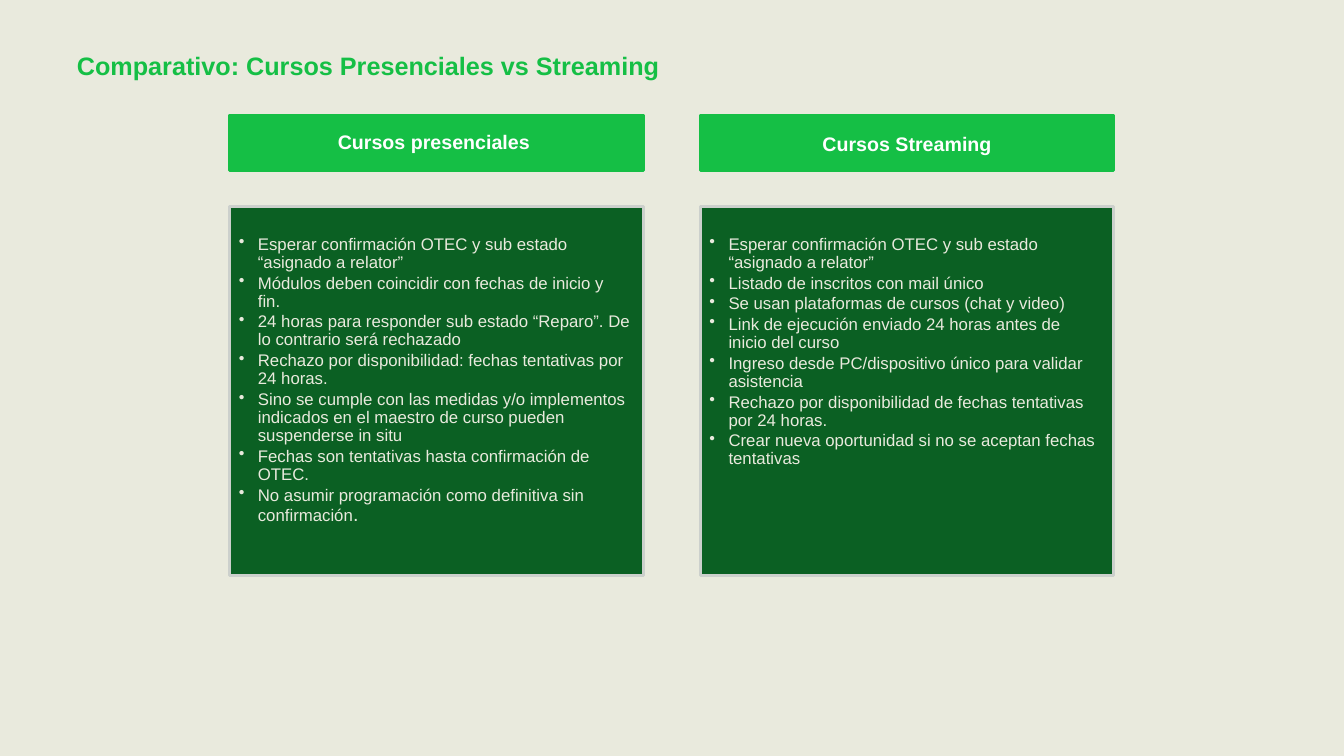
from pptx import Presentation
from pptx.dml.color import RGBColor
from pptx.enum.shapes import MSO_SHAPE as Shape
from pptx.enum.text import MSO_ANCHOR as Anchor, PP_ALIGN as Align
from pptx.oxml.ns import qn
from pptx.util import Cm, Pt
from lxml.etree import SubElement

COLORS = {
    "background": "E9EADD",
    "green": "15BF45",
    "dark_green": "0B6023",
    "border": "CCD0CC",
    "white": "FFFFFF",
}
COLUMN_WIDTH = 10.42
COLUMN_PITCH = 11.86
FIRST_LEFT = 5.79

# Heading, vertical nudge and horizontal nudge of its text, bullets
COLUMNS = [
    ("Cursos presenciales", 0, 0.13, [
        "Esperar confirmación OTEC y sub estado “asignado a relator”",
        "Módulos deben coincidir con fechas de inicio y fin.",
        "24 horas para responder sub estado “Reparo”. De lo contrario será rechazado",
        "Rechazo por disponibilidad: fechas tentativas por 24 horas.",
        "Sino se cumple con las medidas y/o implementos indicados en el maestro "
        "de curso pueden suspenderse in situ",
        "Fechas son tentativas hasta confirmación de OTEC.",
        "No asumir programación como definitiva sin confirmación",
    ]),
    ("Cursos Streaming", 0.1, 0, [
        "Esperar confirmación OTEC y sub estado “asignado a relator”",
        "Listado de inscritos con mail único",
        "Se usan plataformas de cursos (chat y video)",
        "Link de ejecución enviado 24 horas antes de inicio del curso",
        "Ingreso desde PC/dispositivo único para validar asistencia",
        "Rechazo por disponibilidad de fechas tentativas por 24 horas.",
        "Crear nueva oportunidad si no se aceptan fechas tentativas",
    ]),
]


def set_font(font, size, color, bold=False):
    font.name = "Arial"
    font.size = Pt(size)
    font.bold = bold
    font.color.rgb = RGBColor.from_string(COLORS[color])


def add_box(left, top, height, fill, line, margins):
    shape = slide.shapes.add_shape(
        Shape.RECTANGLE, Cm(left), Cm(top), Cm(COLUMN_WIDTH), Cm(height))
    shape.shadow.inherit = False
    shape.fill.solid()
    shape.fill.fore_color.rgb = RGBColor.from_string(COLORS[fill])
    shape.line.color.rgb = RGBColor.from_string(COLORS[line])
    shape.line.width = Pt(2)
    frame = shape.text_frame
    frame.word_wrap = True
    (frame.margin_left, frame.margin_top,
     frame.margin_right, frame.margin_bottom) = [Cm(margin) for margin in margins]
    return frame


presentation = Presentation()
presentation.slide_width = Cm(33.87)
presentation.slide_height = Cm(19.05)
slide = presentation.slides.add_slide(presentation.slide_layouts[6])
slide.background.fill.solid()
slide.background.fill.fore_color.rgb = RGBColor.from_string(COLORS["background"])

# Title
title = slide.shapes.add_textbox(Cm(1.69), Cm(1.22), Cm(15.34), Cm(0.94))
title.text_frame.word_wrap = False
paragraph = title.text_frame.paragraphs[0]
paragraph.text = "Comparativo: Cursos Presenciales vs Streaming"
paragraph.line_spacing = 0.9
set_font(paragraph.runs[0].font, 18, "green", bold=True)

# Two columns: heading above a bulleted panel
for index, (heading, down, shift, bullets) in enumerate(COLUMNS):
    left = FIRST_LEFT + index * COLUMN_PITCH

    frame = add_box(left, 2.9, 1.4, "green", "green",
                    (0.3, 0.18 + down, 0.3 + shift, 0.18))
    frame.vertical_anchor = Anchor.MIDDLE
    paragraph = frame.paragraphs[0]
    paragraph.text = heading
    paragraph.alignment = Align.CENTER
    paragraph.line_spacing = 0.9
    set_font(paragraph.runs[0].font, 14, "white", bold=True)

    frame = add_box(left, 5.21, 9.3, "dark_green", "border",
                    (0.23, 0.73, 0.3, 0.36))
    frame.vertical_anchor = Anchor.TOP
    frame.text = "\n".join(bullets)
    for paragraph in frame.paragraphs:
        paragraph.alignment = Align.LEFT
        paragraph.line_spacing = 0.9
        paragraph.space_after = Pt(1.8)
        properties = paragraph._p.get_or_add_pPr()
        properties.set("marL", str(Cm(0.48)))
        properties.set("indent", str(-Cm(0.48)))
        SubElement(properties, qn("a:buChar"), char="•")
        set_font(paragraph.runs[0].font, 12, "background")

    # The first panel closes with a larger full stop
    if index == 0:
        full_stop = paragraph.add_run()
        full_stop.text = "."
        set_font(full_stop.font, 14, "background")

presentation.save("out.pptx")
